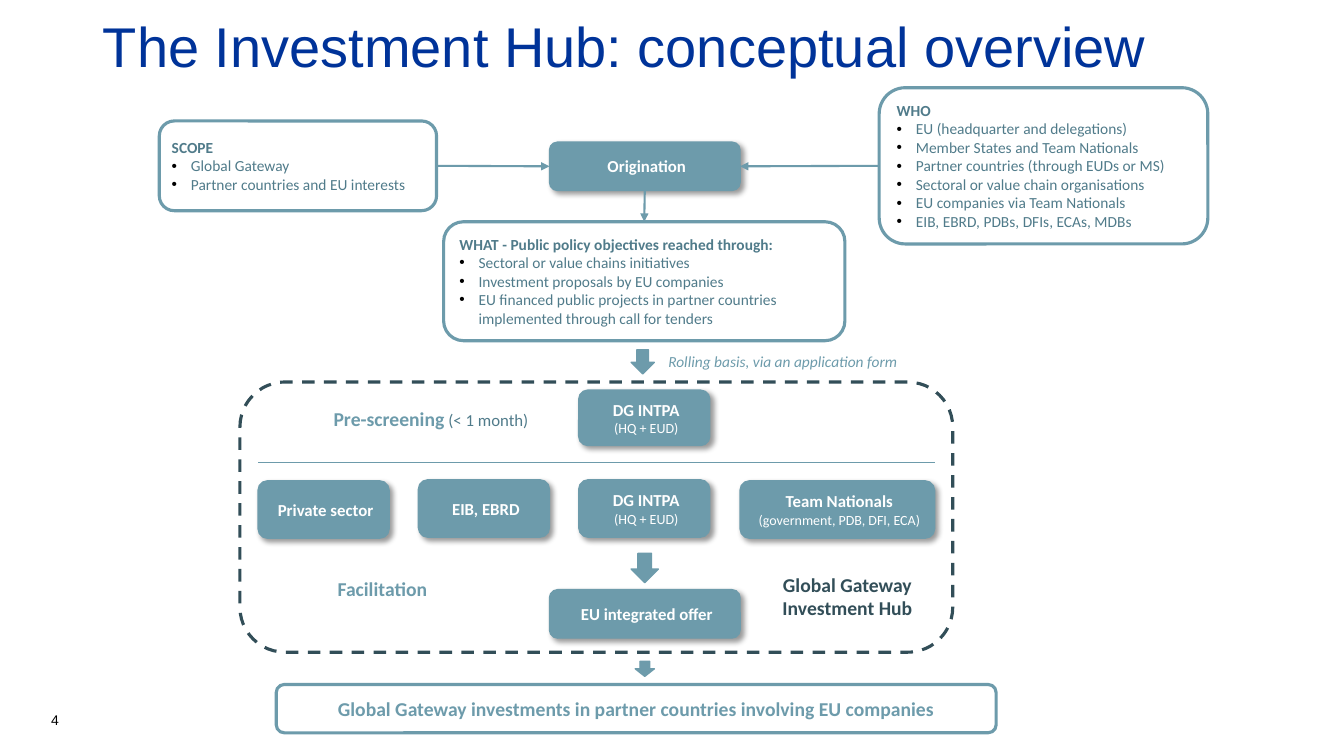
from dataclasses import dataclass

from lxml.etree import SubElement
from pptx import Presentation
from pptx.dml.color import RGBColor
from pptx.enum.dml import MSO_LINE
from pptx.enum.shapes import MSO_CONNECTOR, MSO_SHAPE
from pptx.enum.text import MSO_ANCHOR, PP_ALIGN
from pptx.oxml.ns import qn
from pptx.util import Inches, Pt


@dataclass(frozen=True)
class Theme:
    title: str = "003399"
    teal: str = "6D9BAB"
    body: str = "507B8A"
    dark: str = "324E58"
    white: str = "FFFFFF"
    black: str = "000000"
    heading_font: str = "Arial"
    body_font: str = "Calibri"
    title_size: float = 40
    label_size: float = 14
    box_size: float = 12
    list_size: float = 11
    small_size: float = 10
    frame_width: float = 2.25
    arrow_width: float = 1.5
    thin_width: float = 1


T = Theme()


def rgb(color):
    return RGBColor.from_string(color)


def style(font, size, color, bold=False, italic=False, name=T.body_font):
    font.name, font.size = name, Pt(size)
    font.bold, font.italic = bold, italic
    font.color.rgb = rgb(color)


def set_insets(tf, left, right):
    tf.margin_left, tf.margin_right = Inches(left), Inches(right)


def add_panel(s, kind, box, fill=None, line=T.teal, width=T.thin_width):
    sp = s.shapes.add_shape(kind, *map(Inches, box))
    if fill:
        sp.fill.solid()
        sp.fill.fore_color.rgb = rgb(fill)
    else:
        sp.fill.background()
    sp.line.color.rgb = rgb(line)
    sp.line.width = Pt(width)
    sp.shadow.inherit = False
    sp.text_frame.word_wrap = True
    sp.text_frame.vertical_anchor = MSO_ANCHOR.MIDDLE
    return sp


def add_drop_shadow(sp):
    effects = sp._element.spPr.find(qn("a:effectLst"))
    shadow = SubElement(effects, qn("a:outerShdw"), blurRad=str(Pt(4)),
                        dist=str(Pt(3)), dir=str(45 * 60000), algn="tl", rotWithShape="0")
    color = SubElement(shadow, qn("a:srgbClr"), val=T.black)
    SubElement(color, qn("a:alpha"), val="40000")


def add_actor(s, box, name, detail=None):
    """Filled box with a bold name and an optional smaller detail line."""
    sp = add_panel(s, MSO_SHAPE.ROUNDED_RECTANGLE, box, T.teal)
    add_drop_shadow(sp)
    tf = sp.text_frame
    set_insets(tf, 0.04, 0)
    tf.text = f"{name}\n{detail}" if detail else name
    for i, p in enumerate(tf.paragraphs):
        p.alignment = PP_ALIGN.CENTER
        style(p.runs[0].font, T.small_size if i else T.box_size, T.white, bold=i == 0)
    return sp


def add_bullet(p):
    pPr = p._p.get_or_add_pPr()
    pPr.set("marL", str(Inches(0.19)))
    pPr.set("indent", str(Inches(-0.19)))
    color = SubElement(pPr, qn("a:buClr"))
    SubElement(color, qn("a:srgbClr"), val=T.black)
    SubElement(pPr, qn("a:buFont"), typeface=T.heading_font)
    SubElement(pPr, qn("a:buChar"), char="•")


def add_question(s, box, heading, items, inset=0.1):
    """Outlined box with a bold heading above a bulleted list."""
    sp = add_panel(s, MSO_SHAPE.ROUNDED_RECTANGLE, box, T.white, width=T.frame_width)
    tf = sp.text_frame
    set_insets(tf, inset, inset)
    tf.text = "\n".join([heading, *items])
    for i, p in enumerate(tf.paragraphs):
        p.alignment = PP_ALIGN.LEFT
        if i:
            add_bullet(p)
        style(p.runs[0].font, T.list_size, T.body, bold=i == 0)
    return sp


def add_label(s, box, text, size, color, align=PP_ALIGN.LEFT, **look):
    tf = s.shapes.add_textbox(*map(Inches, box)).text_frame
    tf.word_wrap = True
    p = tf.paragraphs[0]
    p.text, p.alignment = text, align
    style(p.runs[0].font, size, color, **look)
    return tf


def add_line(s, start=(0, 0), end=(0, 0), width=T.thin_width):
    c = s.shapes.add_connector(MSO_CONNECTOR.STRAIGHT, *map(Inches, (*start, *end)))
    c.line.color.rgb = rgb(T.teal)
    c.line.width = Pt(width)
    SubElement(c._element.spPr, qn("a:effectLst"))
    return c


def join(s, source, source_side, target, target_side):
    c = add_line(s, width=T.arrow_width)
    c.begin_connect(source, source_side)
    c.end_connect(target, target_side)
    SubElement(c.line._get_or_add_ln(), qn("a:tailEnd"), type="triangle")


def add_title(s, text):
    sp = s.shapes.title
    sp.left, sp.top, sp.width, sp.height = map(Inches, (0.92, 0.04, 11.5, 0.89))
    sp.fill.solid()
    sp.fill.fore_color.rgb = rgb(T.white)
    tf = sp.text_frame
    tf.text = text
    tf.vertical_anchor = MSO_ANCHOR.MIDDLE
    p = tf.paragraphs[0]
    p.alignment, p.line_spacing = PP_ALIGN.LEFT, 0.9
    style(p.runs[0].font, T.title_size, T.title, name=T.heading_font)


def add_origination(s):
    origination = add_actor(s, (5.45, 1.41, 1.89, 0.48), "Origination")
    scope = add_question(s, (1.58, 1.2, 2.75, 0.89), "SCOPE", [
        "Global Gateway",
        "Partner countries and EU interests",
    ], inset=0.08)
    who = add_question(s, (8.72, 0.87, 3.26, 1.55), "WHO", [
        "EU (headquarter and delegations)",
        "Member States and Team Nationals",
        "Partner countries (through EUDs or MS)",
        "Sectoral or value chain organisations",
        "EU companies via Team Nationals",
        "EIB, EBRD, PDBs, DFIs, ECAs, MDBs",
    ])
    what = add_question(s, (4.4, 2.2, 3.98, 1.18),
                        "WHAT - Public policy objectives reached through:", [
        "Sectoral or value chains initiatives",
        "Investment proposals by EU companies",
        "EU financed public projects in partner countries implemented through call for tenders",
    ])
    join(s, scope, 3, origination, 1)
    join(s, who, 1, origination, 3)
    join(s, origination, 2, what, 0)


def add_hub(s):
    frame = add_panel(s, MSO_SHAPE.ROUNDED_RECTANGLE, (2.38, 3.79, 7.07, 2.68),
                      line=T.dark, width=T.frame_width)
    frame.line.dash_style = MSO_LINE.DASH
    add_label(s, (7.28, 5.63, 2.25, 0.57), "Global Gateway Investment Hub",
              T.label_size, T.dark, PP_ALIGN.CENTER, bold=True)
    tf = add_label(s, (3.21, 3.99, 2.39, 0.34), "Pre-screening",
                   T.label_size, T.teal, bold=True)
    r = tf.paragraphs[0].add_run()
    r.text = " (< 1 month)"
    style(r.font, T.box_size, T.body)
    add_label(s, (3.25, 5.67, 1.27, 0.34), "Facilitation", T.label_size, T.teal, bold=True)
    add_line(s, (2.56, 4.59), (9.27, 4.59))

    intpa = ("DG INTPA", "(HQ + EUD)")
    add_actor(s, (5.74, 3.87, 1.3, 0.55), *intpa)
    add_actor(s, (2.56, 4.77, 1.3, 0.57), "Private sector")
    add_actor(s, (4.15, 4.76, 1.3, 0.57), "EIB, EBRD")
    add_actor(s, (5.74, 4.76, 1.3, 0.57), *intpa)
    add_actor(s, (7.34, 4.77, 1.93, 0.57), "Team Nationals", "(government, PDB, DFI, ECA)")
    add_actor(s, (5.45, 5.85, 1.89, 0.48), "EU integrated offer")


def main():
    prs = Presentation()
    prs.slide_width, prs.slide_height = Inches(13.33), Inches(7.5)
    s = prs.slides.add_slide(prs.slide_layouts[5])
    add_title(s, "The Investment Hub: conceptual overview")
    number = add_label(s, (0.41, 6.87, 3, 0.4), "4", T.small_size, T.black, name=T.heading_font)
    number.vertical_anchor = MSO_ANCHOR.BOTTOM
    add_origination(s)
    add_label(s, (6.53, 3.44, 2.84, 0.29), "Rolling basis, via an application form",
              T.list_size, T.teal, italic=True)
    add_hub(s)
    outcome = add_panel(s, MSO_SHAPE.ROUNDED_RECTANGLE, (2.74, 6.79, 7.14, 0.48),
                        width=T.frame_width)
    p = outcome.text_frame.paragraphs[0]
    p.text = "Global Gateway investments in partner countries involving EU companies"
    p.alignment = PP_ALIGN.CENTER
    style(p.runs[0].font, T.label_size, T.teal, bold=True)
    for box in [(6.26, 3.47, 0.23, 0.24), (6.26, 5.49, 0.27, 0.29), (6.3, 6.56, 0.19, 0.15)]:
        add_panel(s, MSO_SHAPE.DOWN_ARROW, box, T.teal)
    prs.save("out.pptx")


if __name__ == "__main__":
    main()
